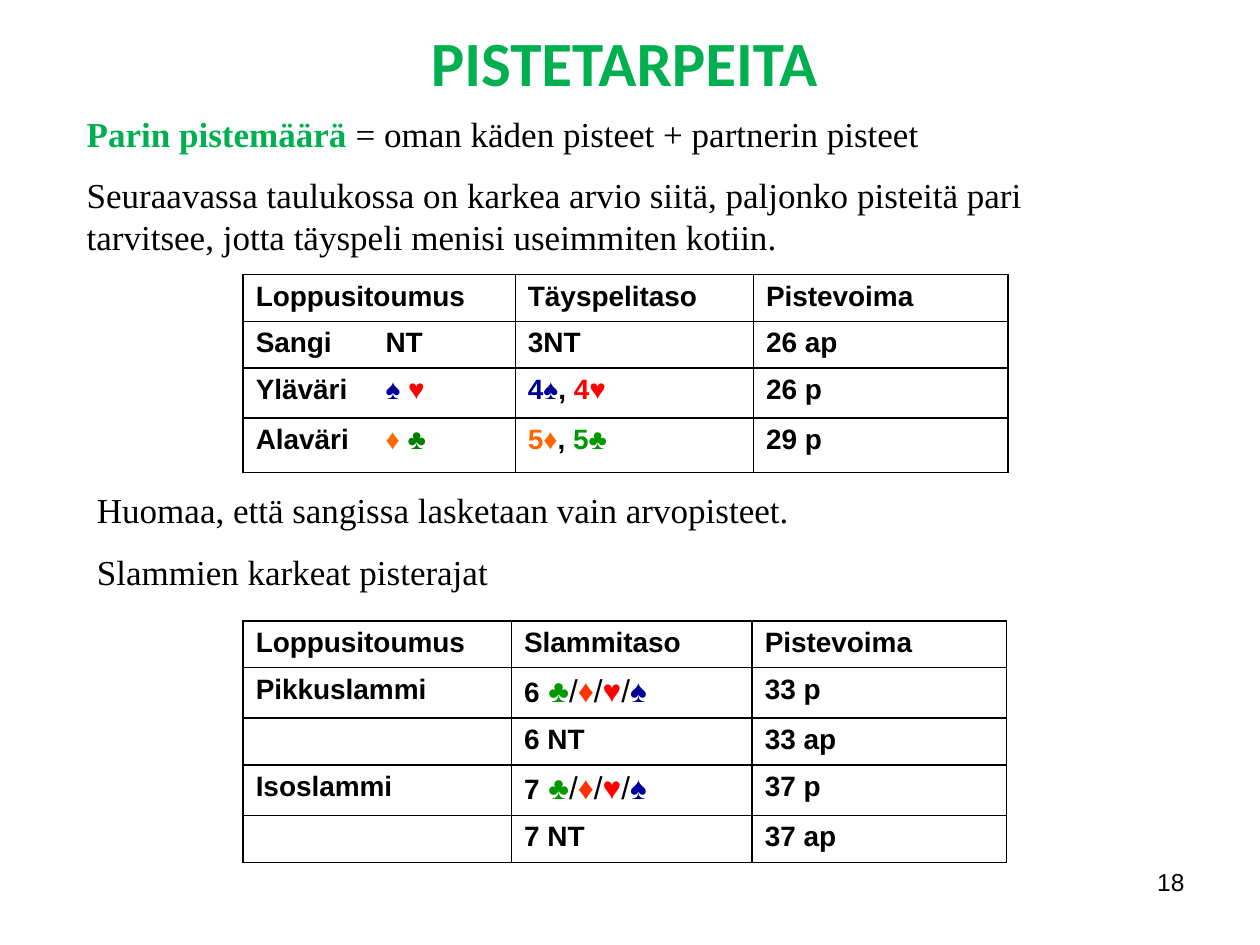
from dataclasses import dataclass

from lxml.etree import SubElement
from pptx import Presentation
from pptx.dml.color import RGBColor
from pptx.enum.text import MSO_ANCHOR, MSO_AUTO_SIZE, PP_ALIGN
from pptx.oxml.ns import qn
from pptx.util import Inches, Pt


@dataclass(frozen=True)
class Theme:
    black: str = "000000"
    green: str = "00B050"
    spade: str = "000099"
    heart: str = "FF0000"
    diamond: str = "FF6600"
    slam_diamond: str = "FF3300"
    club: str = "009900"
    dark_club: str = "008000"
    title: int = 36
    body: int = 20
    suits: int = 18
    cell: int = 16
    number: int = 14


T = Theme()
TITLE = dict(name="Calibri", size=T.title, bold=True, color=T.green)
BODY = dict(name="Times New Roman", size=T.body, bold=False, color=T.black)
LEAD = dict(BODY, bold=True, color=T.green)
CELL = dict(name="Arial", size=T.cell, bold=True, color=T.black)
SUITS = dict(CELL, size=T.suits, bold=False)
NUMBER = dict(CELL, size=T.number, bold=False)


def add_runs(p, runs):
    """Add (text, format) pairs to a paragraph."""
    for text, fmt in runs:
        r = p.add_run()
        r.text = text
        for key, value in fmt.items():
            if key == "color":
                r.font.color.rgb = RGBColor.from_string(value)
            else:
                setattr(r.font, key, Pt(value) if key == "size" else value)


def fill_box(sp, box, paragraphs, align=PP_ALIGN.LEFT):
    """Place a text shape and write its paragraphs."""
    sp.left, sp.top, sp.width, sp.height = map(Inches, box)
    tf = sp.text_frame
    tf.word_wrap = True
    tf.auto_size = MSO_AUTO_SIZE.NONE
    tf.vertical_anchor = MSO_ANCHOR.TOP
    for i, runs in enumerate(paragraphs):
        p = tf.add_paragraph() if i else tf.paragraphs[0]
        p.alignment = align
        p.space_before = Pt(11 if i else 0)
        add_runs(p, runs)


prs = Presentation()
prs.slide_width, prs.slide_height = Inches(10), Inches(7.5)
s = prs.slides.add_slide(prs.slide_layouts[5])

# Title
fill_box(s.shapes.title, (0.98, 0.14, 7.95, 0.71),
         [[("PISTETARPEITA", TITLE)]], PP_ALIGN.CENTER)

# Body texts and page number
texts = [
    ((0.59, 0.84, 8.66, 1.27), PP_ALIGN.LEFT, [
        [("Parin pistemäärä ", LEAD),
         ("= oman käden pisteet + partnerin pisteet", BODY)],
        [("Seuraavassa taulukossa on karkea arvio siitä, paljonko pisteitä pari "
          "tarvitsee, jotta täyspeli menisi useimmiten kotiin.", BODY)]]),
    ((0.67, 3.83, 8.58, 0.93), PP_ALIGN.LEFT, [
        [("Huomaa, että sangissa lasketaan vain arvopisteet.", BODY)],
        [("Slammien karkeat pisterajat", BODY)]]),
    ((7.17, 6.83, 2.33, 0.52), PP_ALIGN.RIGHT, [[("18", NUMBER)]]),
]
for box, align, paragraphs in texts:
    fill_box(s.shapes.add_textbox(0, 0, 0, 0), box, paragraphs, align)

# Table contents: a cell is a plain string or a list of (text, format) runs
spade, heart, diamond, club, dark_club = (
    dict(CELL, color=c)
    for c in (T.spade, T.heart, T.diamond, T.club, T.dark_club))
slash = ("/", SUITS)
all_suits = [(" ", SUITS), ("♣", dict(SUITS, color=T.club)), slash,
             ("♦", dict(SUITS, color=T.slam_diamond)), slash,
             ("♥", dict(SUITS, color=T.heart)), slash,
             ("♠", dict(SUITS, color=T.spade))]
game_rows = [
    ["Loppusitoumus", "Täyspelitaso", "Pistevoima"],
    ["Sangi\tNT", "3NT", "26 ap"],
    [[("Yläväri\t", CELL), ("♠ ", spade), ("♥", heart)],
     [("4♠", spade), (", ", CELL), ("4♥", heart)], "26 p"],
    [[("Alaväri\t", CELL), ("♦ ", diamond), ("♣", dark_club)],
     [("5♦", diamond), (", ", CELL), ("5♣", club)], "29 p"],
]
slam_rows = [
    ["Loppusitoumus", "Slammitaso", "Pistevoima"],
    ["Pikkuslammi", [("6", CELL)] + all_suits, "33 p"],
    ["", "6 NT", "33 ap"],
    ["Isoslammi", [("7", CELL)] + all_suits, "37 p"],
    ["", "7 NT", "37 ap"],
]
tables = [
    (2.18, [2.16, 1.89, 2.02], [0.37, 0.37, 0.4, 0.43], game_rows),
    (4.93, [2.13, 1.91, 2.02], [0.37, 0.4, 0.37, 0.4, 0.37], slam_rows),
]

# Tables
for top, widths, heights, rows in tables:
    table = s.shapes.add_table(
        len(rows), len(widths), Inches(1.93), Inches(top),
        Inches(sum(widths)), Inches(sum(heights))).table
    table.first_row = table.horz_banding = False
    for col, width in zip(table.columns, widths):
        col.width = Inches(width)
    for row, height, contents in zip(table.rows, heights, rows):
        row.height = Inches(height)
        for cell, content in zip(row.cells, contents):
            p = cell.text_frame.paragraphs[0]
            runs = [(content, CELL)] if isinstance(content, str) else content
            if content:
                add_runs(p, runs)
            else:
                SubElement(p._p, qn("a:endParaRPr"), sz=str(T.cell * 100))
            if any("\t" in text for text, _ in runs):
                tabs = SubElement(p._p.get_or_add_pPr(), qn("a:tabLst"))
                SubElement(tabs, qn("a:tab"), pos=str(Inches(1.03)), algn="l")
            # Borders come before the fill in the cell properties
            tc_pr = cell._tc.get_or_add_tcPr()
            for side in ("lnL", "lnR", "lnT", "lnB"):
                ln = SubElement(tc_pr, qn(f"a:{side}"), w=str(Pt(1)))
                fill = SubElement(ln, qn("a:solidFill"))
                SubElement(fill, qn("a:srgbClr"), val=T.black)
            cell.fill.background()

prs.save("out.pptx")
